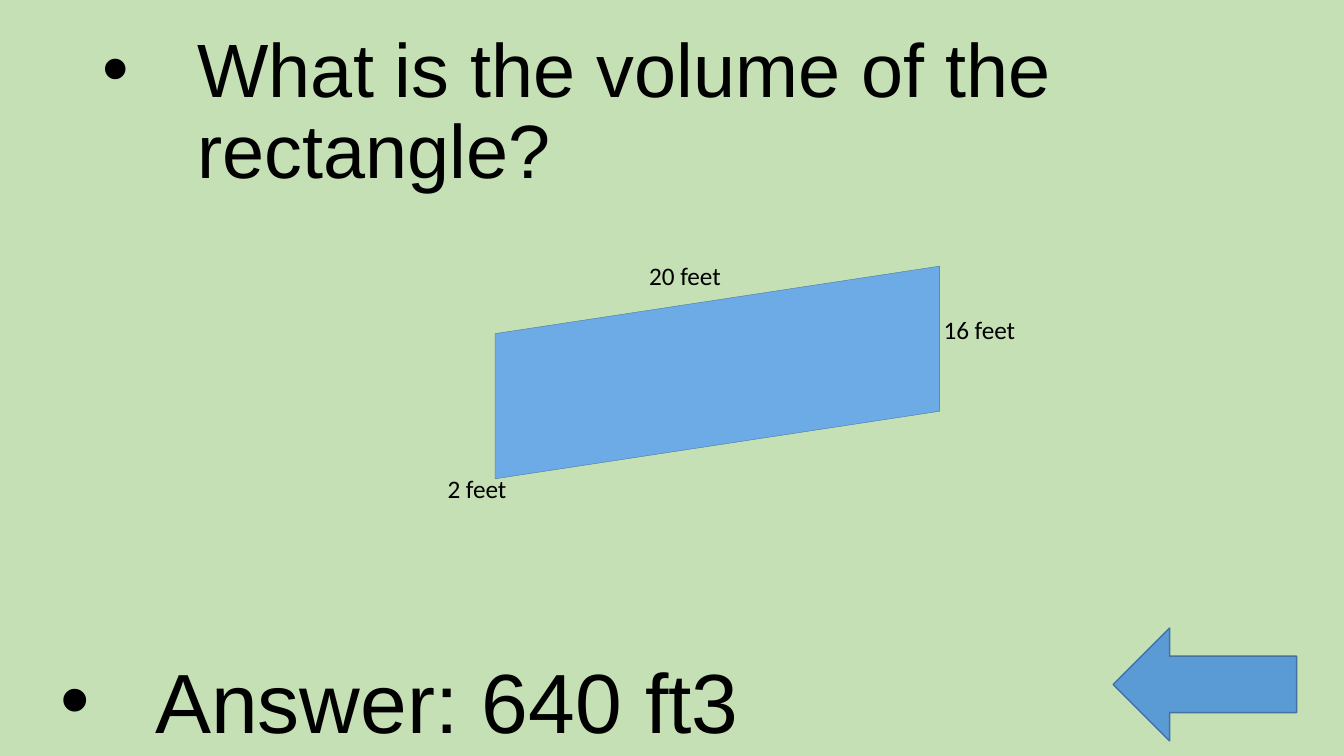
from lxml.etree import SubElement
from pptx import Presentation
from pptx.dml.color import RGBColor as Color
from pptx.enum.shapes import MSO_SHAPE as Preset
from pptx.enum.text import MSO_ANCHOR as Anchor, MSO_AUTO_SIZE as AutoSize, PP_ALIGN as Align
from pptx.oxml.ns import qn
from pptx.util import Inches, Pt

THEME = {
    "background": Color.from_string("C5E0B4"),
    "text": Color.from_string("000000"),
    "arrow": Color.from_string("5B9BD5"),
    "face": Color.from_string("6CABE6"),
    "outline": Color.from_string("43739E"),
    "heading_font": "Arial",
    "label_font": "Calibri",
    "question_size": Pt(54),
    "answer_size": Pt(60),
    "label_size": Pt(18),
}
BULLET_INDENT = Inches(0.94)


def write_text(shape, box, text, font_name, size, anchor=Anchor.TOP, spacing=1.0, bullet=False):
    """Place a text shape and fill it with one formatted paragraph."""
    shape.left, shape.top, shape.width, shape.height = map(Inches, box)
    frame = shape.text_frame
    frame.text = text
    frame_format = {"word_wrap": True, "auto_size": AutoSize.NONE, "vertical_anchor": anchor}
    for name, value in frame_format.items():
        setattr(frame, name, value)
    paragraph = frame.paragraphs[0]
    paragraph_format = {"alignment": Align.LEFT, "line_spacing": spacing, "space_before": Pt(0)}
    for name, value in paragraph_format.items():
        setattr(paragraph, name, value)
    font = paragraph.runs[0].font
    for name, value in {"name": font_name, "size": size}.items():
        setattr(font, name, value)
    font.color.rgb = THEME["text"]
    if bullet:
        properties = paragraph._p.get_or_add_pPr()
        properties.set("marL", str(BULLET_INDENT))
        properties.set("indent", str(-BULLET_INDENT))
        SubElement(properties, qn("a:buFont")).set("typeface", "Arial")
        SubElement(properties, qn("a:buChar")).set("char", "•")


def paint(shape, fill, line_width):
    shape.shadow.inherit = False
    shape.fill.solid()
    shape.fill.fore_color.rgb = fill
    shape.line.color.rgb = THEME["outline"]
    shape.line.width = line_width


# Slide
presentation = Presentation()
presentation.slide_width, presentation.slide_height = Inches(13.33), Inches(7.5)
slide = presentation.slides.add_slide(presentation.slide_layouts[1])
slide.background.fill.solid()
slide.background.fill.fore_color.rgb = THEME["background"]

# Question
write_text(slide.shapes.title, (0.92, 0.4, 11.5, 1.45), "What is the volume of the rectangle?",
           THEME["heading_font"], THEME["question_size"], Anchor.MIDDLE, 0.9, bullet=True)

# Slanted face: two upright edges, the right one raised
left, right, top, height, rise = 4.91, 9.32, 3.31, 1.44, 0.67
corners = [(left, top), (right, top - rise), (right, top - rise + height), (left, top + height)]
points = [(Inches(x), Inches(y)) for x, y in corners]
builder = slide.shapes.build_freeform(*points[0])
builder.add_line_segments(points[1:], close=True)
paint(builder.convert_to_shape(), THEME["face"], Pt(0.25))

# Dimensions
dimensions = [
    ("20 feet", 6.34, 2.53, 1.31),
    ("2 feet", 4.34, 4.65, 1.01),
    ("16 feet", 9.26, 3.07, 1.34),
]
for text, x, y, width in dimensions:
    box = (x, y, width, 0.4)
    label = slide.shapes.add_textbox(*map(Inches, box))
    write_text(label, box, text, THEME["label_font"], THEME["label_size"])

# Answer
write_text(slide.placeholders[1], (0.5, 6.39, 7.38, 1.11), "Answer: 640 ft3",
           THEME["heading_font"], THEME["answer_size"], bullet=True)

# Back arrow
arrow = slide.shapes.add_shape(Preset.LEFT_ARROW, *map(Inches, (11.04, 6.23, 1.82, 1.12)))
paint(arrow, THEME["arrow"], Pt(1))

presentation.save("out.pptx")
